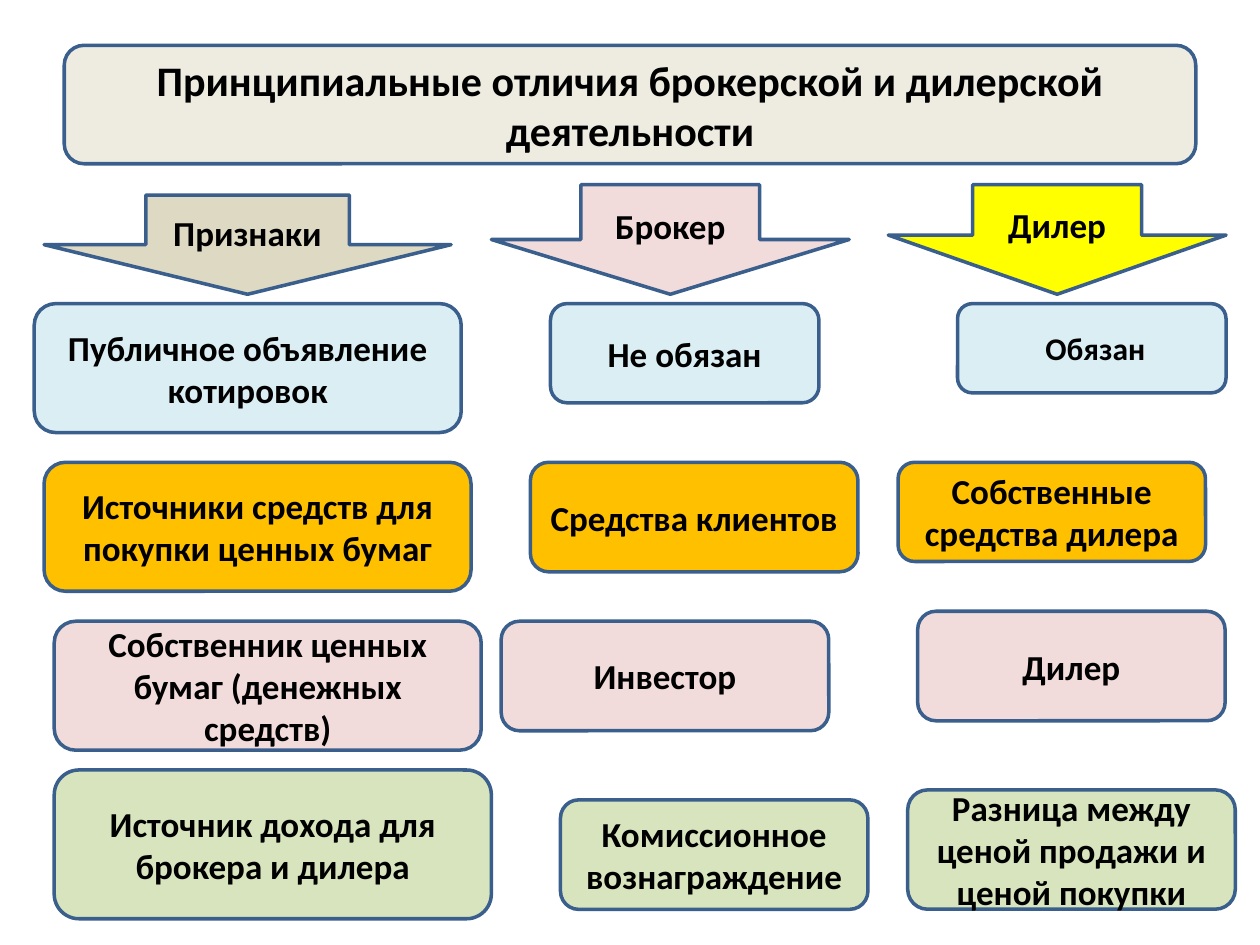
from pptx import Presentation
from pptx.dml.color import RGBColor
from pptx.enum import shapes, text
from pptx.util import Pt

COLORS = {
    "outline": "3A5F8C", "ink": "000000", "cream": "EEECE1", "sand": "DDD9C3",
    "rose": "F2DCDB", "yellow": "FFFF00", "sky": "DBEEF4", "amber": "FFC000",
    "green": "D7E4BD",
}
HEADING = "Принципиальные отличия брокерской и дилерской деятельности"
HEADING_BOX = (36.7, 25.9, 646.6, 67.7)
ARROW_TIP = 168.2

COLUMNS = [
    ("Признаки", "sand", 25.2, 232.6, 56.7, 0.5),
    ("Брокер", "rose", 280.8, 204.5, 62.6, 0.5),
    ("Дилер", "yellow", 507.6, 193, 62.6, 0.54),
]
ROWS = [
    ("sky", [
        ("Публичное объявление котировок", 19.6, 173.5, 244, 73.7, 20),
        ("Не обязан", 314.6, 173.5, 153.4, 56.7, 20),
        (" Обязан", 547.2, 173.5, 153.4, 51, 18),
    ]),
    ("amber", [
        ("Источники средств для покупки ценных бумаг", 25.2, 264.2, 244, 73.7, 20),
        ("Средства клиентов", 303.1, 264.2, 187.2, 62.6, 20),
        ("Собственные средства дилера", 513.2, 264.2, 175.7, 56.7, 20),
    ]),
    ("rose", [
        ("Собственник ценных бумаг (денежных средств)", 31, 355, 244, 73.7, 20),
        ("Инвестор", 286.4, 355, 187.2, 62.6, 20),
        ("Дилер", 524.4, 349.3, 175.7, 62.6, 20),
    ]),
    ("green", [
        ("Источник дохода для брокера и дилера", 31, 440, 249.8, 85, 20),
        ("Комиссионное вознаграждение", 320.3, 457.1, 175.7, 62.6, 20),
        ("Разница между ценой продажи и ценой покупки", 518.7, 451.4, 187.2, 68.2, 20),
    ]),
]


def color(name):
    return RGBColor.from_string(COLORS[name])


def write(shape, wording, size):
    frame = shape.text_frame
    frame.text = wording
    frame.word_wrap = True
    frame.auto_size = text.MSO_AUTO_SIZE.NONE
    frame.vertical_anchor = text.MSO_ANCHOR.MIDDLE
    paragraph = frame.paragraphs[0]
    paragraph.alignment = text.PP_ALIGN.CENTER
    font = paragraph.font
    font.name, font.size, font.bold = "Calibri", Pt(size), True
    font.color.rgb = color("ink")


def add_block(slide, preset, box, fill):
    block = slide.shapes.add_shape(preset, *map(Pt, box))
    block.shadow.inherit = False
    block.fill.solid()
    block.fill.fore_color.rgb = color(fill)
    block.line.color.rgb = color("outline")
    block.line.width = Pt(2)
    return block


def main():
    deck = Presentation()
    deck.slide_width, deck.slide_height = Pt(720), Pt(540)
    slide = deck.slides.add_slide(deck.slide_layouts[5])
    rounded = shapes.MSO_SHAPE.ROUNDED_RECTANGLE

    panel = add_block(slide, rounded, HEADING_BOX, "cream")
    heading = slide.shapes.title
    heading.left, heading.top, heading.width, heading.height = map(Pt, HEADING_BOX)
    write(heading, HEADING, 24)
    panel.element.addnext(heading.element)

    for wording, fill, left, width, height, head in COLUMNS:
        box = (left, ARROW_TIP - height, width, height)
        arrow = add_block(slide, shapes.MSO_SHAPE.DOWN_ARROW, box, fill)
        arrow.adjustments[1] = head
        write(arrow, wording, 20)

    for fill, cells in ROWS:
        for wording, *box, size in cells:
            write(add_block(slide, rounded, box, fill), wording, size)

    deck.save("out.pptx")


if __name__ == "__main__":
    main()
